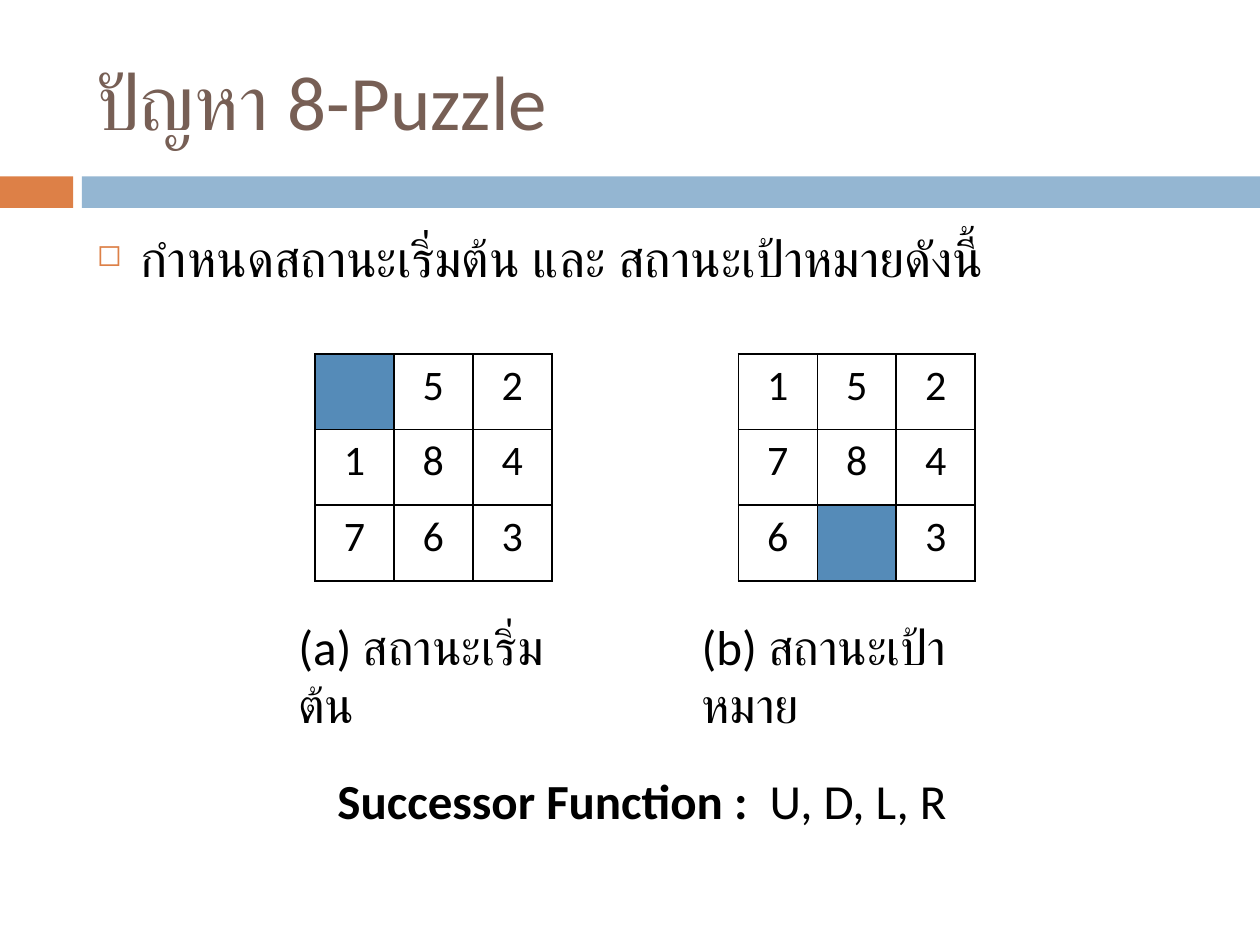
from lxml import etree
from pptx import Presentation
from pptx.dml import color
from pptx.enum import shapes, text
from pptx.oxml import ns
from pptx.util import Inches, Pt

FONT = "Calibri"
BLACK = "000000"
WHITE = "FFFFFF"
BLANK_TILE = "558BB8"
ORANGE = "DD8047"


def rgb(value):
    return color.RGBColor.from_string(value)


def child(parent, tag, **attrs):
    return etree.SubElement(parent, ns.qn(tag), attrs)


def style(p, size, colour=BLACK):
    p.font.name = FONT
    p.font.size = Pt(size)
    p.font.color.rgb = rgb(colour)


def add_bar(s, left, width, colour):
    sp = s.shapes.add_shape(shapes.MSO_SHAPE.RECTANGLE, Inches(left),
                            Inches(1.4), Inches(width), Inches(0.25))
    sp.shadow.inherit = False
    sp.fill.solid()
    sp.fill.fore_color.rgb = rgb(colour)
    sp.line.fill.background()


def set_title(s, title):
    sp = s.shapes.title
    sp.left, sp.top = Inches(0.67), Inches(0.25)
    sp.width, sp.height = Inches(8.92), Inches(1.08)
    tf = sp.text_frame
    tf.text = title
    tf.vertical_anchor = text.MSO_ANCHOR.MIDDLE
    p = tf.paragraphs[0]
    p.alignment = text.PP_ALIGN.LEFT
    style(p, 44, "775F55")


def add_text(s, left, top, width, height, runs, size=28):
    sp = s.shapes.add_textbox(Inches(left), Inches(top),
                              Inches(width), Inches(height))
    tf = sp.text_frame
    tf.word_wrap = True
    p = tf.paragraphs[0]
    style(p, size)
    for content, bold in runs:
        r = p.add_run()
        r.text = content
        r.font.bold = bold
    return p


def add_bullet(p):
    p.space_before = Pt(7)
    pPr = p._p.get_or_add_pPr()
    indent = Inches(0.35)
    pPr.set("marL", str(indent))
    pPr.set("indent", str(-indent))
    bullet = etree.Element("bullet")
    child(child(bullet, "a:buClr"), "a:srgbClr", val=ORANGE)
    child(bullet, "a:buSzPct", val="60000")
    child(bullet, "a:buChar", char="◻")
    spacing = pPr.find(ns.qn("a:spcBef"))
    for element in reversed(list(bullet)):
        spacing.addnext(element)


def add_borders(cell):
    tcPr = cell._tc.get_or_add_tcPr()
    for i, side in enumerate(("L", "R", "T", "B")):
        ln = etree.Element(ns.qn(f"a:ln{side}"), w=str(Pt(1)))
        child(child(ln, "a:solidFill"), "a:srgbClr", val=BLACK)
        tcPr.insert(i, ln)


def add_puzzle(s, left, rows):
    size = len(rows)
    frame = s.shapes.add_table(size, size, Inches(left), Inches(2.81),
                               Inches(1.88), Inches(1.8))
    table = frame.table
    table.first_row = False
    table.horz_banding = False
    for r, row in enumerate(rows):
        for c, tile in enumerate(row):
            cell = table.cell(r, c)
            cell.text = tile.strip()
            cell.fill.solid()
            cell.fill.fore_color.rgb = rgb(WHITE if tile.strip() else BLANK_TILE)
            p = cell.text_frame.paragraphs[0]
            p.alignment = text.PP_ALIGN.CENTER
            style(p, 24)
            add_borders(cell)


def main():
    prs = Presentation()
    prs.slide_width, prs.slide_height = Inches(10), Inches(7.5)
    s = prs.slides.add_slide(prs.slide_layouts.get_by_name("Title Only"))
    add_bar(s, 0, 0.58, ORANGE)
    add_bar(s, 0.65, 9.35, "94B6D2")
    set_title(s, "ปัญหา 8-Puzzle")
    p = add_text(s, 0.67, 1.75, 8.92, 4.92,
                 [("กำหนดสถานะเริ่มต้น และ สถานะเป้าหมายดังนี้", False)], 29)
    add_bullet(p)
    add_puzzle(s, 2.5, (" 52", "184", "763"))
    add_puzzle(s, 5.86, ("152", "784", "6 3"))
    add_text(s, 2.27, 4.84, 2.34, 0.57, [("(a) สถานะเริ่มต้น", False)])
    add_text(s, 5.47, 4.84, 2.66, 0.57, [("(b) สถานะเป้าหมาย", False)])
    add_text(s, 2.58, 6.07, 6.48, 0.57,
             [("Successor Function :  ", True), ("U, D, L, R", False)])
    prs.save("out.pptx")


if __name__ == "__main__":
    main()
